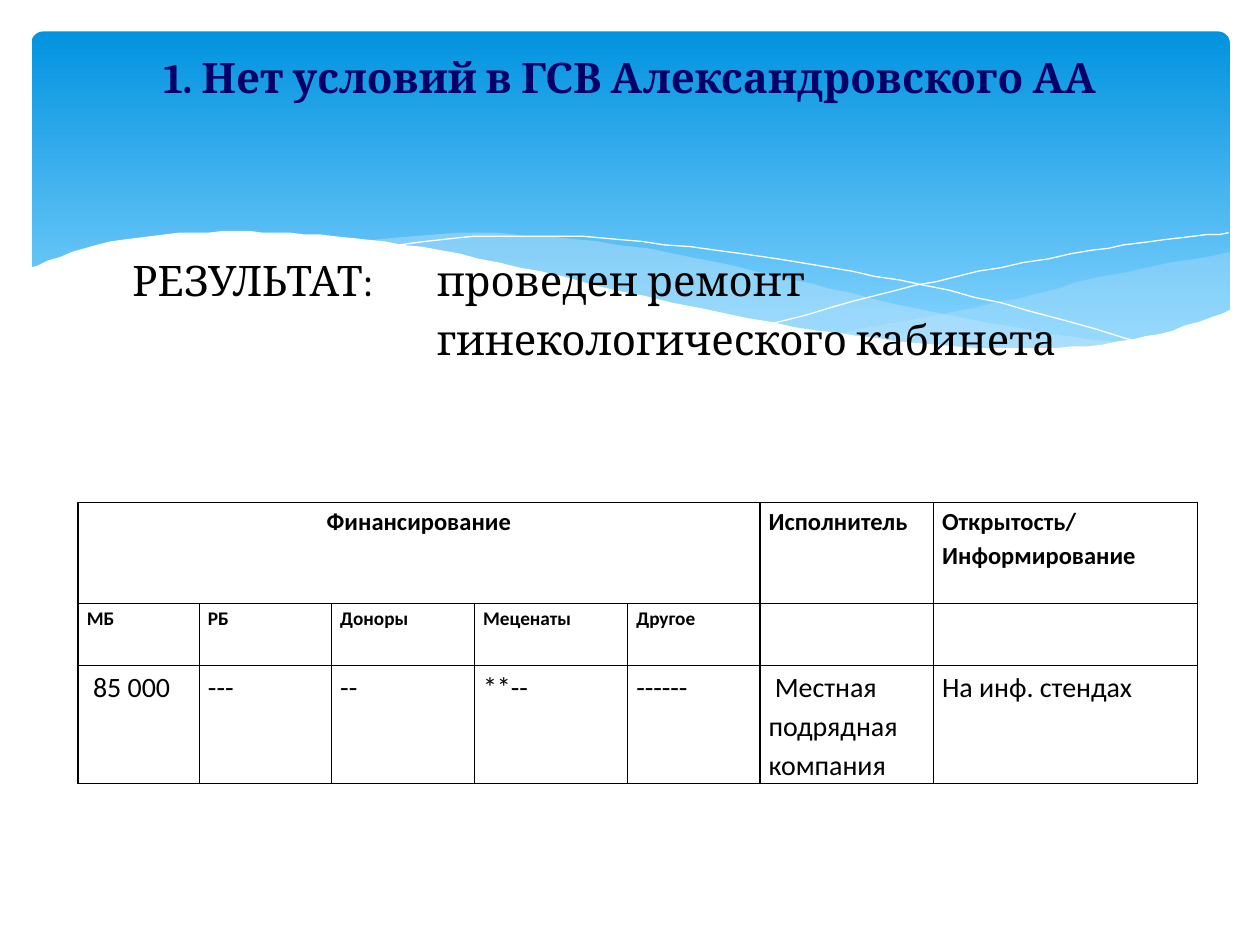
import dataclasses

import lxml.etree
import pptx
import pptx.dml.color
import pptx.enum.dml
import pptx.enum.shapes
import pptx.enum.text
import pptx.oxml.ns
import pptx.util

Pt = pptx.util.Pt
qn = pptx.oxml.ns.qn
Align = pptx.enum.text.PP_ALIGN
Point = tuple[float, float]


@dataclasses.dataclass
class Wave:
    """A shape whose edge runs through smooth curves, then straight corners."""
    curves: list[list[Point]]
    corners: list[Point] = dataclasses.field(default_factory=list)
    fill: str = ""
    alpha: int = 100
    line: str = ""


@dataclasses.dataclass
class Row:
    height: float
    size: float
    bold: bool
    texts: list[str]


WAVES = [
    # Right veil
    Wave([[(702.7, 144), (641.5, 155.5), (579.6, 170.6), (525, 182.2), (476, 190.8)],
          [(476, 190.8), (517.7, 195.8), (553.7, 199.4), (593.3, 199.6),
           (634.3, 196.6), (668, 189.4), (702.7, 177.8)]],
         fill="C6E7FC", alpha=29),
    # Middle veil
    Wave([[(643, 196.6), (581, 187.2), (508.3, 172.8), (452.9, 159.8), (399.6, 147.6),
           (352, 139.7), (302.4, 134.6), (260, 133.2), (206, 137.5)],
          [(206, 137.5), (260.6, 146.2), (323.3, 159.8), (381.6, 172.8), (445, 185.8),
           (500.4, 194.4), (548, 199.4), (596.2, 200.2), (643, 196.6)]],
         fill="C6E7FC", alpha=40),
    # Thin falling and rising lines
    Wave([[(222.5, 140.4), (261.4, 136), (311.8, 134.6), (367.2, 138.2),
           (437.8, 146.9), (500.4, 157.7), (572.4, 173.5), (653, 195.8)]],
         line="FFFFFF"),
    Wave([[(441.4, 185), (500.4, 169.2), (558.7, 155.5), (623.5, 143.3),
           (665.3, 136.8), (702, 133.2)]], line="FFFFFF"),
    # White front
    Wave([[(703.4, 177.1), (669.6, 188.6), (630, 196.6), (582.5, 199.4), (522.7, 195.8),
           (466.6, 188.6), (399.6, 176.4), (321.8, 158.4), (262.8, 145.4), (210.2, 136.8),
           (165.6, 133.2), (127.4, 132.5), (85.7, 134.6), (48.2, 141.8), (16.6, 153.4)]],
         corners=[(16.6, 236.9), (703.4, 236.9)], fill="FFFFFF"),
]

WIDTHS = [69.3, 75.6, 81.6, 87.6, 75.6, 99.2, 150.8]
ROWS = [
    Row(57.7, 14, True, ["Финансирование", "", "", "", "", "Исполнитель",
                         "Открытость/Информирование"]),
    Row(35.4, 11, True, ["МБ", "РБ", "Доноры", "Меценаты", "Другое", "", ""]),
    Row(66, 16, False, [" 85 000", "---", "--", "**--", "------",
                        " Местная подрядная компания", "На инф. стендах"]),
]


def tint(code: str) -> pptx.dml.color.RGBColor:
    return pptx.dml.color.RGBColor.from_string(code)


def style(para, font: str, size: float, code: str, bold: bool = False) -> None:
    for run in para.runs:
        run.font.name = font
        run.font.size = Pt(size)
        run.font.bold = bold
        run.font.color.rgb = tint(code)


def smooth(knots: list[Point], steps: int = 5) -> list[Point]:
    """Catmull-Rom curve through the knots."""
    ends = [knots[0], *knots, knots[-1]]
    curve = [knots[0]]
    for a, b, c, d in zip(ends, ends[1:], ends[2:], ends[3:]):
        for step in range(1, steps + 1):
            t = step / steps
            curve.append(tuple(
                b[i] + t * (c[i] - a[i]) / 2
                + t ** 2 * (2 * a[i] - 5 * b[i] + 4 * c[i] - d[i]) / 2
                + t ** 3 * (3 * b[i] - a[i] - 3 * c[i] + d[i]) / 2
                for i in (0, 1)))
    return curve


def draw_wave(shapes, wave: Wave) -> None:
    dots = [dot for knots in wave.curves for dot in smooth(knots)] + wave.corners
    pen = shapes.build_freeform(*dots[0], scale=Pt(1))
    pen.add_line_segments(dots[1:], close=bool(wave.fill))
    shape = pen.convert_to_shape()
    shape.shadow.inherit = False
    if wave.fill:
        shape.fill.solid()
        shape.fill.fore_color.rgb = tint(wave.fill)
        clr = shape._element.spPr.find(qn("a:solidFill"))[0]
        lxml.etree.SubElement(clr, qn("a:alpha"), val=str(wave.alpha * 1000))
    else:
        shape.fill.background()
    if wave.line:
        shape.line.color.rgb = tint(wave.line)
        shape.line.width = Pt(0)
    else:
        shape.line.fill.background()


def draw_sky(shapes) -> None:
    sky = shapes.add_shape(pptx.enum.shapes.MSO_SHAPE.ROUNDED_RECTANGLE,
                           Pt(18), Pt(18), Pt(684.7), Pt(194.4))
    sky.adjustments[0] = 0.034
    sky.shadow.inherit = False
    sky.line.fill.background()
    sky.fill.gradient()
    sky.fill.gradient_angle = 270
    for stop, place, code in zip(sky.fill.gradient_stops, (0, 0.9), ("0293E0", "83D3FE")):
        stop.position = place
        stop.color.rgb = tint(code)


def place(shape, left: float, top: float, width: float, height: float) -> None:
    shape.left, shape.top = Pt(left), Pt(top)
    shape.width, shape.height = Pt(width), Pt(height)
    shape.text_frame.auto_size = pptx.enum.text.MSO_AUTO_SIZE.NONE
    shape.text_frame.vertical_anchor = pptx.enum.text.MSO_ANCHOR.TOP


def fill_cell(cell, text: str, row: Row) -> None:
    cell.margin_left = cell.margin_right = Pt(5)
    cell.margin_top = cell.margin_bottom = 0
    cell.text_frame.text = text
    para = cell.text_frame.paragraphs[0]
    para.line_spacing = 1.15
    para.font.size = Pt(row.size)
    style(para, "Calibri", row.size, "000000", row.bold)
    # Borders come before the fill in the cell properties
    props = cell._tc.get_or_add_tcPr()
    for side in ("a:lnL", "a:lnR", "a:lnT", "a:lnB"):
        edge = lxml.etree.SubElement(props, qn(side), w=str(Pt(1)))
        paint = lxml.etree.SubElement(edge, qn("a:solidFill"))
        lxml.etree.SubElement(paint, qn("a:srgbClr"), val="000000")
    cell.fill.background()


def draw_table(shapes) -> None:
    frame = shapes.add_table(len(ROWS), len(WIDTHS), Pt(44.6), Pt(287.2),
                             Pt(sum(WIDTHS)), Pt(sum(row.height for row in ROWS)))
    table = frame.table
    table.first_row = table.horz_banding = False
    for col, width in zip(table.columns, WIDTHS):
        col.width = Pt(width)
    for r, row in enumerate(ROWS):
        table.rows[r].height = Pt(row.height)
        for c, text in enumerate(row.texts):
            fill_cell(table.cell(r, c), text, row)
    head = table.cell(0, 0)
    head.merge(table.cell(0, 4))
    head.text_frame.paragraphs[0].alignment = Align.CENTER


def main() -> None:
    deck = pptx.Presentation()
    deck.slide_width, deck.slide_height = Pt(720), Pt(540)
    slide = deck.slides.add_slide(deck.slide_layouts[1])
    title, body = slide.placeholders

    # Backdrop
    draw_sky(slide.shapes)
    for wave in WAVES:
        draw_wave(slide.shapes, wave)

    # Title and result, in front of the backdrop
    for shape in (title, body):
        slide.shapes._spTree.append(shape._element)
    place(title, 36, 25.9, 648, 90.7)
    title.text_frame.text = "1. Нет условий в ГСВ Александровского АА"
    title.text_frame.paragraphs[0].alignment = Align.CENTER
    style(title.text_frame.paragraphs[0], "Cambria", 24, "000066", True)

    place(body, 68.4, 141.8, 558.7, 105.8)
    body.text_frame.text = "РЕЗУЛЬТАТ:\tпроведен ремонт\nгинекологического кабинета"
    for para, hang in zip(body.text_frame.paragraphs, (-174, 0)):
        style(para, "Cambria", 24, "000000")
        para.space_before = Pt(4.8)
        props = para._p.get_or_add_pPr()
        props.set("marL", str(Pt(174)))
        props.set("indent", str(Pt(hang)))
        lxml.etree.SubElement(props, qn("a:buNone"))

    # Funding table
    draw_table(slide.shapes)
    deck.save("out.pptx")


if __name__ == "__main__":
    main()
